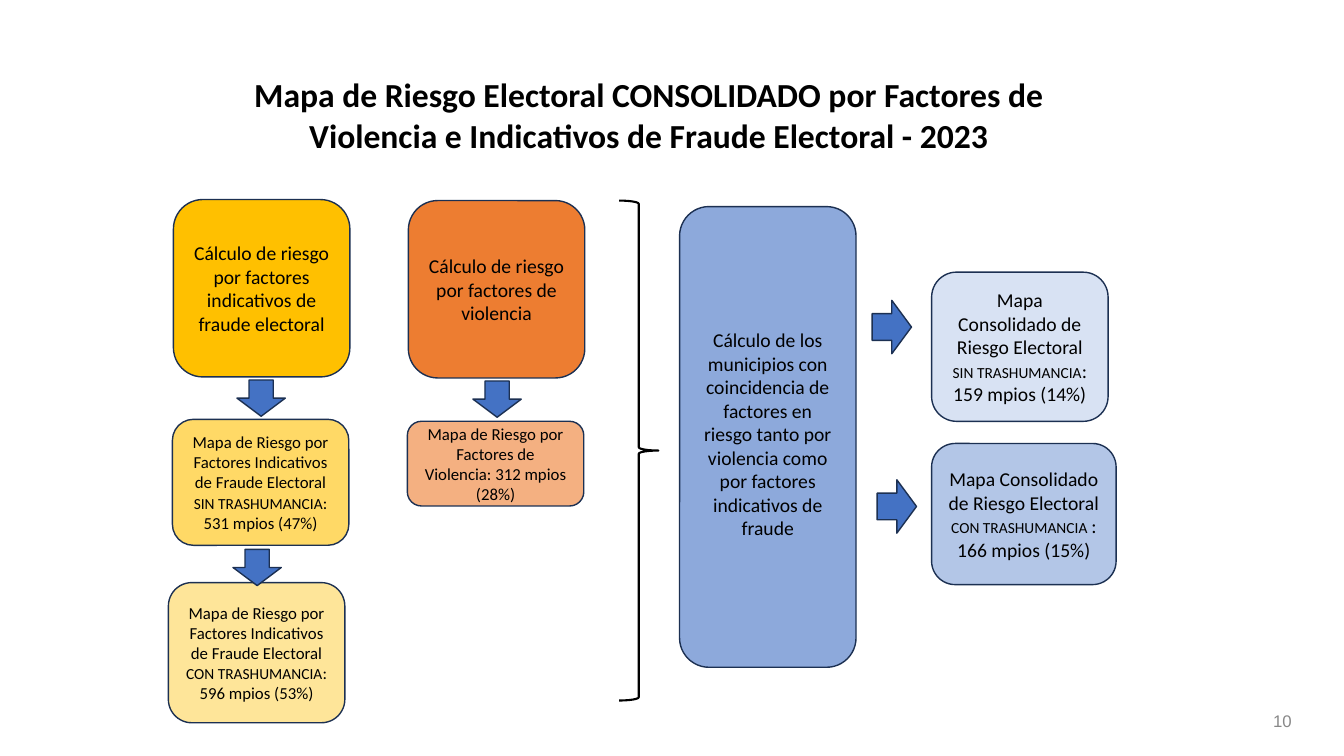
"""Build the slide on the consolidated electoral risk map for 2023."""
from dataclasses import dataclass

from pptx import Presentation
from pptx.dml.color import RGBColor
from pptx.enum.shapes import MSO_SHAPE as Shape
from pptx.enum.text import MSO_ANCHOR as Anchor, PP_ALIGN as Align
from pptx.util import Pt

PX = 9144


@dataclass(frozen=True)
class Theme:
    font: str = "Calibri"
    number_font: str = "Arial"
    ink: str = "000000"
    muted: str = "888888"
    outline: str = "1C3052"
    arrow: str = "4472C4"
    gold: str = "FFC000"
    gold_mid: str = "FFD966"
    gold_light: str = "FEE599"
    orange: str = "ED7D31"
    orange_light: str = "F4B081"
    blue: str = "8DA9DB"
    blue_mid: str = "B3C6E7"
    blue_light: str = "D8E2F3"
    title: int = 24
    large: int = 14
    normal: int = 12
    small: int = 11


theme = Theme()
deck = Presentation()
deck.slide_width, deck.slide_height = 1333 * PX, 750 * PX
page = deck.slides.add_slide(deck.slide_layouts[6])


def add_shape(kind, place, fill=None, line=theme.outline, weight=1):
    shape = page.shapes.add_shape(kind, *(length * PX for length in place))
    shape.shadow.inherit = False
    if fill:
        shape.fill.solid()
        shape.fill.fore_color.rgb = RGBColor.from_string(fill)
    else:
        shape.fill.background()
    shape.line.color.rgb = RGBColor.from_string(line)
    shape.line.width = Pt(weight)
    return shape


def write(box, pieces, align=Align.CENTER, color=theme.ink, font=theme.font, bold=False, side=10):
    frame = box.text_frame
    frame.word_wrap = True
    frame.vertical_anchor = Anchor.MIDDLE
    frame.margin_left = frame.margin_right = side * PX
    frame.margin_top = frame.margin_bottom = 5 * PX
    para = frame.paragraphs[0]
    para.alignment = align
    for text, size in pieces:
        span = para.add_run()
        span.text = text
        span.font.name = font
        span.font.size = Pt(size)
        span.font.bold = bold
        span.font.color.rgb = RGBColor.from_string(color)


number = page.shapes.add_textbox(991 * PX, 695 * PX, 300 * PX, 40 * PX)
write(number, [("10", theme.normal)], Align.RIGHT, theme.muted, theme.number_font)

title = page.shapes.add_textbox(230 * PX, 88 * PX, 827 * PX, 51 * PX)
write(title, [("Mapa de Riesgo Electoral CONSOLIDADO por Factores de "
               "Violencia e Indicativos de Fraude Electoral - 2023", theme.title)], bold=True, side=5)

fraud_map = "Mapa de Riesgo por Factores Indicativos de Fraude Electoral "
joint_map = "Mapa Consolidado de Riesgo Electoral "
cards = [
    ((172, 198, 175, 176), theme.gold, theme.large,
     ["Cálculo de riesgo por factores indicativos de fraude electoral"]),
    ((405, 199, 175, 176), theme.orange, theme.large,
     ["Cálculo de riesgo por factores de violencia"]),
    ((674, 205, 175, 457), theme.blue, theme.large,
     ["Cálculo de los municipios con coincidencia de factores en riesgo tanto "
      "por violencia como por factores indicativos de fraude"]),
    ((171, 416, 175, 125), theme.gold_mid, theme.normal,
     [fraud_map, "SIN TRASHUMANCIA", ": 531 mpios (47%)"]),
    ((167, 578, 175, 139), theme.gold_light, theme.normal,
     [fraud_map, "CON TRASHUMANCIA", ": 596 mpios (53%)"]),
    ((924, 270, 175, 148), theme.blue_light, theme.large,
     [joint_map, "SIN TRASHUMANCIA", ": 159 mpios (14%)"]),
    ((924, 440, 183, 140), theme.blue_mid, theme.large,
     [joint_map, "CON TRASHUMANCIA ", ": 166 mpios (15%)"]),
    ((404, 418, 175, 84), theme.orange_light, theme.normal,
     ["Mapa de Riesgo por Factores de Violencia: 312 mpios (28%)"]),
]
for place, fill, size, texts in cards:
    card = add_shape(Shape.ROUNDED_RECTANGLE, place, fill)
    write(card, zip(texts, (size, theme.small, size)))
    if fill == theme.blue:
        card.text_frame.margin_bottom = 11 * PX

for left, top in ((865, 298), (870, 476)):
    add_shape(Shape.RIGHT_ARROW, (left, top, 39, 53), theme.arrow)
for left, top in ((241, 371), (237, 539), (475, 372)):
    add_shape(Shape.RIGHT_ARROW, (left, top, 36, 48), theme.arrow).rotation = 90

add_shape(Shape.RIGHT_BRACE, (614, 199, 39, 496), line=theme.ink, weight=1.5)

deck.save("out.pptx")
